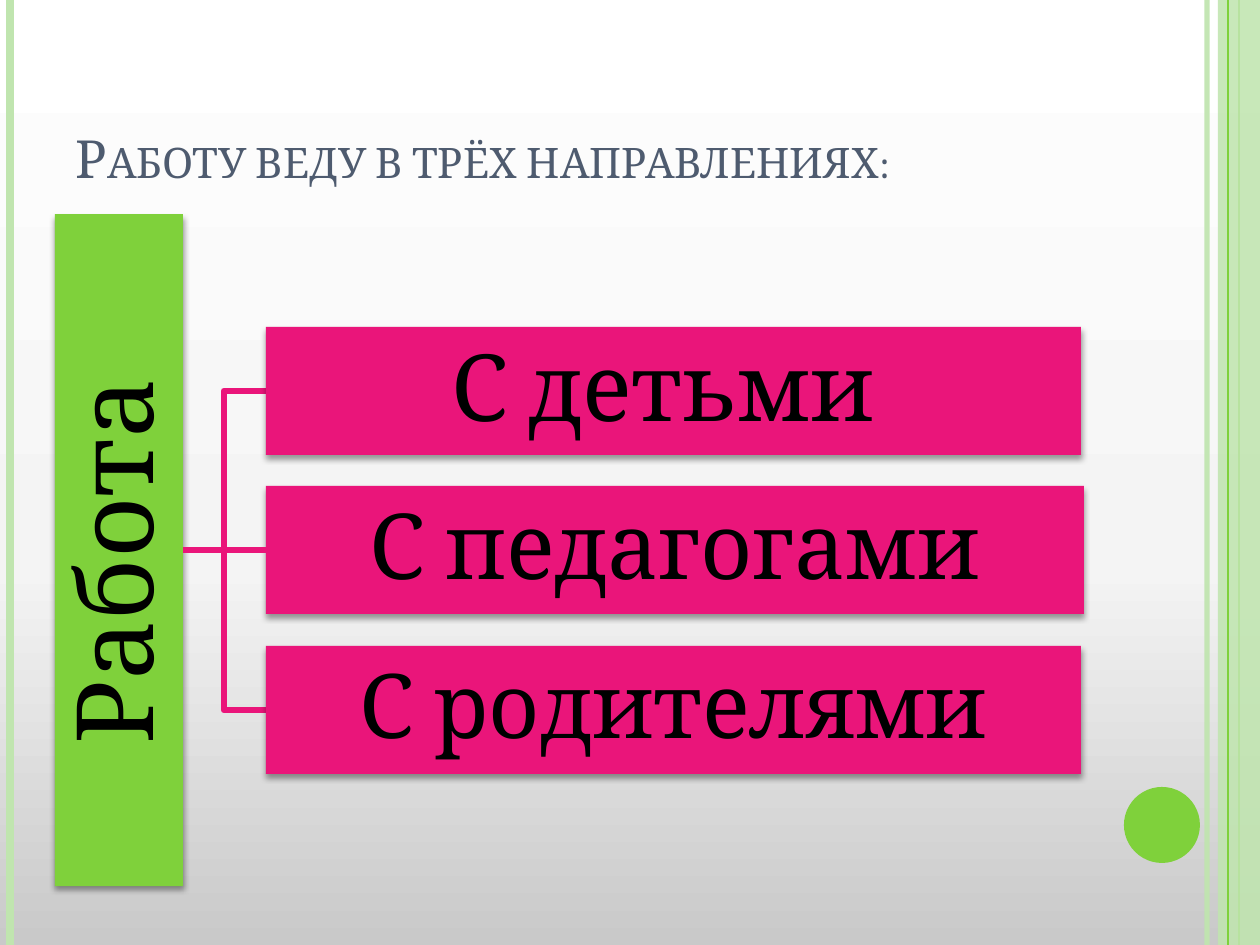
from lxml.etree import SubElement
from pptx import Presentation
from pptx.dml.color import RGBColor
from pptx.enum.shapes import MSO_CONNECTOR as Connector, MSO_SHAPE as Shape
from pptx.enum.text import MSO_ANCHOR as Anchor, MSO_AUTO_SIZE as AutoSize, PP_ALIGN as Align
from pptx.oxml import parse_xml
from pptx.oxml.ns import nsdecls, qn
from pptx.util import Pt

PX = 914400 / 126
GREEN, PALE, PINK = "7FD13B", "C0E5AF", "EA157A"


def paint(color_format, color, alpha=100):
    color_format.rgb = RGBColor.from_string(color)
    if alpha < 100:
        SubElement(color_format._xFill.find(qn("a:srgbClr")), qn("a:alpha"), val=str(alpha * 1000))


def add_block(kind, left, top, width, height, color, text="", size=0, alpha=100):
    box = page.shapes.add_shape(kind, *(round(n * PX) for n in (left, top, width, height)))
    box.shadow.inherit = False
    box.fill.solid()
    paint(box.fill.fore_color, color, alpha)
    box.line.fill.background()
    if text:
        effects = box._element.spPr.find(qn("a:effectLst"))
        effects.append(parse_xml(
            f'<a:outerShdw {nsdecls("a")} blurRad="44450" dist="25400" dir="5400000" rotWithShape="0">'
            '<a:srgbClr val="000000"><a:alpha val="38000"/></a:srgbClr></a:outerShdw>'))
        frame = box.text_frame
        frame.word_wrap = True
        frame.vertical_anchor = Anchor.MIDDLE
        frame.margin_left = frame.margin_right = frame.margin_top = frame.margin_bottom = round(5 * PX)
        frame.text = text
        para = frame.paragraphs[0]
        para.alignment = Align.CENTER
        para.line_spacing = 0.9
        span = para.runs[0]
        span.font.name = "Cambria"
        span.font.size = Pt(size)
        paint(span.font.color, "000000")
    return box


deck = Presentation()
deck.slide_width, deck.slide_height = round(1260 * PX), round(945 * PX)
page = deck.slides.add_slide(deck.slide_layouts[5])

stops = "".join(f'<a:gs pos="{position}000"><a:srgbClr val="{color}"/></a:gs>'
                for position, color in ((0, "C9C9C9"), (40, "F4F4F4"), (100, "FFFFFF")))
page.element.cSld.insert(0, parse_xml(
    f'<p:bg {nsdecls("p", "a")}><p:bgPr><a:gradFill rotWithShape="1"><a:gsLst>{stops}</a:gsLst>'
    '<a:lin ang="16200000" scaled="0"/></a:gradFill><a:effectLst/></p:bgPr></p:bg>'))

lines = []
for x, color, width, alpha in ((1207, PALE, 3, 93), (10, PALE, 4.5, 100),
                               (1239, GREEN, 1.5, 100), (1228, GREEN, 0.75, 100)):
    if x == 1228:
        add_block(Shape.RECTANGLE, 1218, 0, 42, 945, PALE, alpha=87)
    line = page.shapes.add_connector(Connector.STRAIGHT, round(x * PX), 0, round(x * PX), deck.slide_height)
    line.line.width = Pt(width)
    paint(line.line.color, color, alpha)
    lines.append(line)
add_block(Shape.OVAL, 1124, 787, 76, 76, GREEN)

title = page.shapes.title
title.left, title.top, title.width, title.height = (round(n * PX) for n in (63, 38, 1029, 157))
frame = title.text_frame
frame.text = "Работу веду в трёх направлениях:"
frame.word_wrap = True
frame.auto_size = AutoSize.NONE
frame.vertical_anchor = Anchor.BOTTOM
para = frame.paragraphs[0]
para.alignment = Align.LEFT
span = para.runs[0]
span.font.name = "Cambria"
span.font.size = Pt(30)
span.font._element.set("cap", "small")
paint(span.font.color, "4E5B6F")

for end_y in (710, 391):
    builder = page.shapes.build_freeform(183, 550, scale=PX)
    builder.add_line_segments([(224, 550), (224, end_y), (266, end_y)], close=False)
    branch = builder.convert_to_shape()
    branch.shadow.inherit = False
    branch.fill.background()
    branch.line.width = Pt(3.78)
    paint(branch.line.color, PINK)

work = add_block(Shape.RECTANGLE, -217, 486, 672, 128, GREEN, "Работа ", 61)
work.rotation = 270

directions = []
for index, (text, width, size) in enumerate((("С детьми ", 815, 53), ("С педагогами", 818, 52),
                                             ("С родителями", 815, 51))):
    top = 327 + index * 319 // 2
    directions.append(add_block(Shape.RECTANGLE, 266, top, width, 128, PINK, text, size))

stem = page.shapes.add_connector(Connector.STRAIGHT, 0, 0, 0, 0)
stem.begin_connect(work, 2)
stem.end_connect(directions[1], 1)
stem.begin_x, stem.begin_y = round(183 * PX), stem.end_y
stem.line.width = Pt(3.78)
paint(stem.line.color, PINK)
lines.append(stem)

for line in lines:
    SubElement(line._element.spPr, qn("a:effectLst"))

deck.save("out.pptx")
